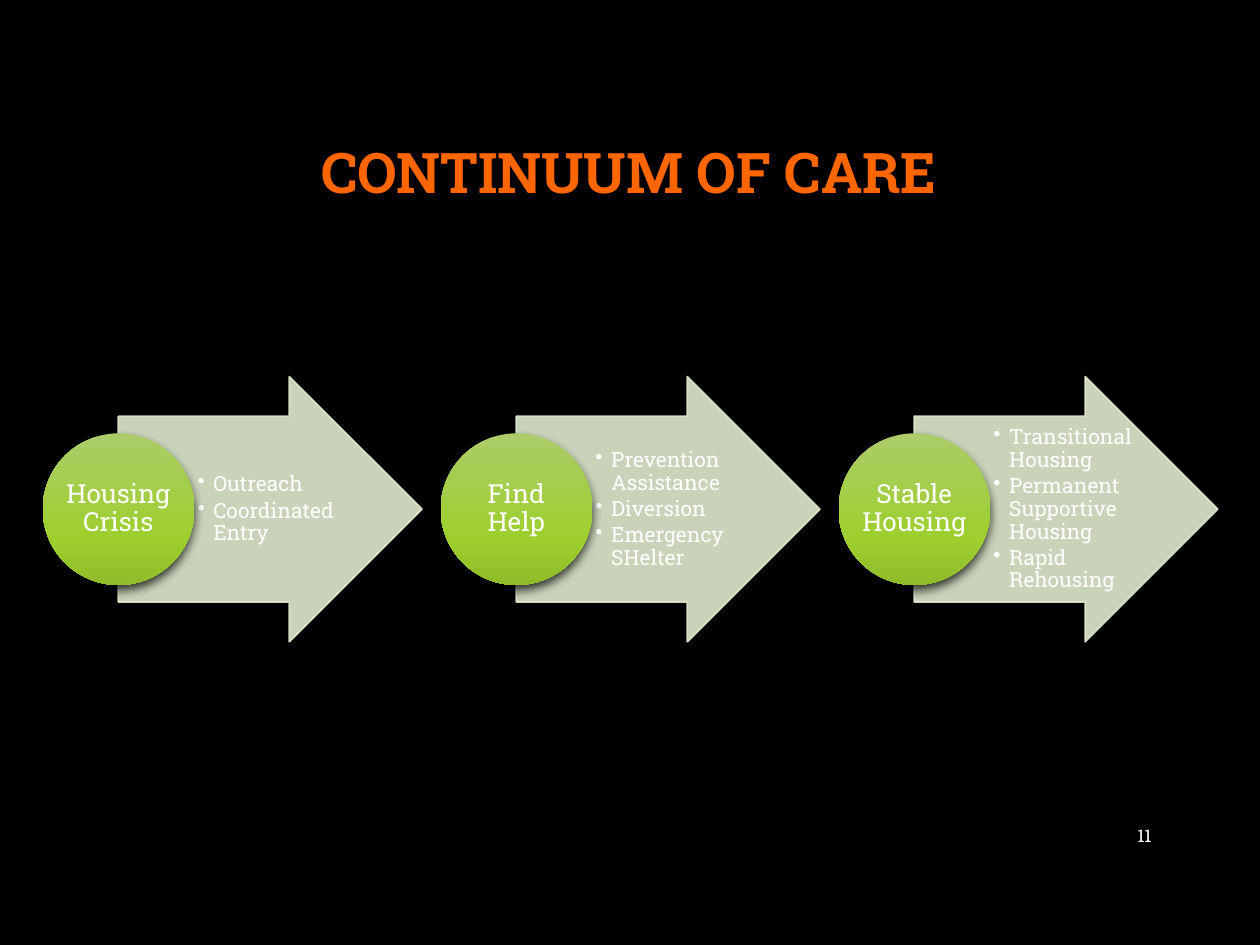
from dataclasses import dataclass
from typing import Any

import pptx
import pptx.dml.color
import pptx.enum.shapes
import pptx.enum.text
import pptx.oxml
import pptx.oxml.ns
import pptx.util

Pt = pptx.util.Pt
ALIGN = pptx.enum.text.PP_ALIGN
SHAPE = pptx.enum.shapes.MSO_SHAPE
FONT = "Roboto Slab"
COLORS = {
    "background": "000000",
    "title": "FF6600",
    "text": "FFFFFF",
    "arrow": "DFEACF",
    "shadow": "000000",
}
CIRCLE_STOPS = {0: "ABCC69", 69: "9ECF2E", 100: "90BC2A"}
NAMESPACE = pptx.oxml.ns.nsdecls("a")
STAGE_STEP = 227.4


@dataclass(frozen=True)
class Box:
    left: float
    top: float
    width: float
    height: float

    def moved(self, offset: float) -> "Box":
        return Box(self.left + offset, self.top, self.width, self.height)

    def lengths(self) -> list:
        return [Pt(value) for value in (self.left, self.top, self.width, self.height)]


@dataclass(frozen=True)
class Stage:
    name: str
    services: tuple[str, ...]


TITLE = Box(54, 48.2, 611.3, 104.4)
PAGE_NUMBER = Box(620.6, 463, 44.6, 28.8)
ARROW = Box(67.6, 215.2, 173.5, 151.5)
SERVICES = Box(110.9, 238.2, 84.3, 106)
CIRCLE = Box(24.4, 247.6, 86.7, 86.7)
NAME = Box(37, 260.4, 61.2, 61.2)

STAGES = [
    Stage("Housing Crisis", ("Outreach", "Coordinated Entry")),
    Stage("Find Help", ("Prevention Assistance", "Diversion", "Emergency SHelter")),
    Stage("Stable Housing", ("Transitional Housing", "Permanent Supportive Housing",
                             "Rapid Rehousing")),
]


def rgb(name: str) -> Any:
    return pptx.dml.color.RGBColor.from_string(COLORS[name])


def apply(target: Any, formats: dict) -> None:
    for name, value in formats.items():
        setattr(target, name, value)


def write(shape: Any, lines: tuple[str, ...], size: float, align: Any,
          color: str = "text", bold: bool = False, spacing: float = 0.9,
          margins: tuple = (7.2, 3.6, 7.2, 3.6)) -> list:
    """Fill a shape with one formatted paragraph per line; return the paragraphs."""
    frame = shape.text_frame
    sides = ("margin_left", "margin_top", "margin_right", "margin_bottom")
    apply(frame, {
        "word_wrap": True,
        "vertical_anchor": pptx.enum.text.MSO_ANCHOR.MIDDLE,
        **{side: Pt(value) for side, value in zip(sides, margins)},
    })
    frame.text = "\n".join(lines)
    for para in frame.paragraphs:
        apply(para, {"alignment": align, "line_spacing": spacing})
        for span in para.runs:
            apply(span.font, {"name": FONT, "size": Pt(size), "bold": bold})
            span.font.color.rgb = rgb(color)
    return list(frame.paragraphs)


def add_bullet(para: Any, indent: float) -> None:
    apply(para, {"level": 1, "space_after": Pt(2)})
    properties = para._p.get_or_add_pPr()
    properties.set("marL", str(Pt(indent)))
    properties.set("indent", str(-Pt(indent)))
    properties.append(pptx.oxml.parse_xml(f'<a:buChar {NAMESPACE} char="•"/>'))


def add_shadow(shape: Any, blur: float, distance: float, opacity: int) -> None:
    shape.shadow.inherit = False
    effects = shape._element.spPr.find(pptx.oxml.ns.qn("a:effectLst"))
    effects.append(pptx.oxml.parse_xml(
        f'<a:outerShdw {NAMESPACE} blurRad="{Pt(blur)}" dist="{Pt(distance)}" '
        f'dir="5400000" algn="ctr" rotWithShape="0">'
        f'<a:srgbClr val="{COLORS["shadow"]}"><a:alpha val="{opacity * 1000}"/>'
        f'</a:srgbClr></a:outerShdw>'))


def set_opacity(shape: Any, percent: int) -> None:
    """Apply one opacity to both the fill and the outline."""
    for color in shape._element.spPr.iter(pptx.oxml.ns.qn("a:srgbClr")):
        color.append(pptx.oxml.parse_xml(
            f'<a:alpha {NAMESPACE} val="{percent * 1000}"/>'))


def add_arrow(page: Any, box: Box) -> None:
    arrow = page.shapes.add_shape(SHAPE.RIGHT_ARROW, *box.lengths())
    arrow.adjustments[0] = 0.7
    arrow.adjustments[1] = 0.5
    arrow.fill.solid()
    arrow.fill.fore_color.rgb = rgb("arrow")
    arrow.line.color.rgb = rgb("arrow")
    arrow.line.width = Pt(1)
    set_opacity(arrow, 90)
    add_shadow(arrow, 4, 3, 54)


def add_circle(page: Any, box: Box) -> None:
    circle = page.shapes.add_shape(SHAPE.OVAL, *box.lengths())
    circle.line.fill.background()
    stops = "".join(f'<a:gs pos="{place * 1000}"><a:srgbClr val="{color}"/></a:gs>'
                    for place, color in CIRCLE_STOPS.items())
    outline = circle._element.spPr.find(pptx.oxml.ns.qn("a:ln"))
    outline.addprevious(pptx.oxml.parse_xml(
        f'<a:gradFill {NAMESPACE} rotWithShape="1"><a:gsLst>{stops}</a:gsLst>'
        f'<a:lin ang="5400000" scaled="0"/></a:gradFill>'))
    add_shadow(circle, 6, 3, 76)


def add_stage(page: Any, stage: Stage, offset: float) -> None:
    add_arrow(page, ARROW.moved(offset))
    services = page.shapes.add_textbox(*SERVICES.moved(offset).lengths())
    for para in write(services, stage.services, 12, ALIGN.LEFT,
                      margins=(2, 0.6, 1.2, 0.6)):
        add_bullet(para, 9)
    add_circle(page, CIRCLE.moved(offset))
    name = page.shapes.add_textbox(*NAME.moved(offset).lengths())
    paras = write(name, (stage.name,), 15, ALIGN.CENTER, margins=(0.8,) * 4)
    paras[0].space_after = Pt(5)


def main() -> None:
    deck = pptx.Presentation()
    apply(deck, {"slide_width": Pt(720), "slide_height": Pt(540)})
    page = deck.slides.add_slide(deck.slide_layouts.get_by_name("Title Only"))
    page.background.fill.solid()
    page.background.fill.fore_color.rgb = rgb("background")

    title = page.shapes.title
    apply(title, dict(zip(("left", "top", "width", "height"), TITLE.lengths())))
    write(title, ("CONTINUUM OF CARE",), 32, ALIGN.CENTER, "title", bold=True)

    number = page.shapes.add_textbox(*PAGE_NUMBER.lengths())
    write(number, ("11",), 10, ALIGN.RIGHT, spacing=1.0)

    for index, stage in enumerate(STAGES):
        add_stage(page, stage, index * STAGE_STEP)
    deck.save("out.pptx")


if __name__ == "__main__":
    main()
